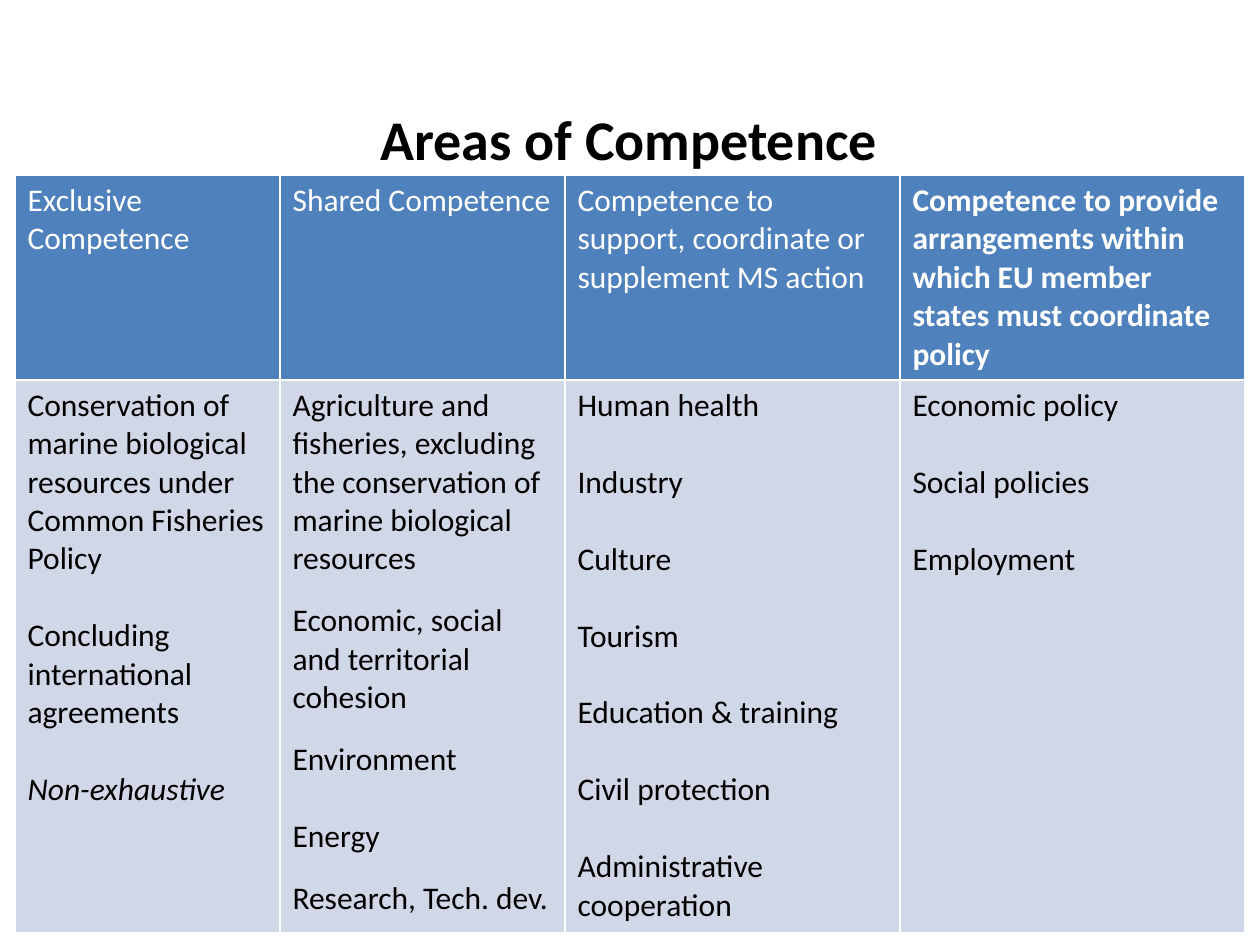
from lxml.etree import SubElement
from pptx import Presentation
from pptx.dml.color import RGBColor
from pptx.enum.text import MSO_ANCHOR, PP_ALIGN
from pptx.oxml.ns import qn
from pptx.util import Emu, Pt

PX = 914400 / 126
BLACK = RGBColor(0x00, 0x00, 0x00)
WHITE = RGBColor(0xFF, 0xFF, 0xFF)
BLUE = RGBColor(0x4F, 0x81, 0xBD)
PALE = RGBColor(0xD0, 0xD8, 0xE8)

TITLE = {"size": Pt(32), "bold": True, "italic": False, "name": "Calibri"}
BODY = {"size": Pt(18), "bold": False, "italic": False, "name": "Calibri"}
BOLD = {**BODY, "bold": True}
ITALIC = {**BODY, "italic": True}
WIDE, NARROW = 22, 13.4

COLUMN_WIDTHS = [265, 285, 335, 345]
ROW_HEIGHTS = [202, 553]

HEADERS = [
    ("Exclusive Competence", BODY),
    ("Shared Competence", BODY),
    ("Competence to support, coordinate or supplement MS action", BODY),
    ("Competence to provide arrangements within which EU member states "
     "must coordinate policy", BOLD),
]
AREAS = [
    [("Conservation of marine biological resources under Common Fisheries Policy", 0, BODY),
     ("Concluding international agreements", WIDE, BODY),
     ("Non-exhaustive", WIDE, ITALIC)],
    [("Agriculture and fisheries, excluding the conservation of marine "
      "biological resources", 0, BODY),
     ("Economic, social and territorial cohesion", NARROW, BODY),
     ("Environment", NARROW, BODY),
     ("Energy", WIDE, BODY),
     ("Research, Tech. dev.", NARROW, BODY)],
    [("Human health", 0, BODY)] + [
        (area, WIDE, BODY) for area in (
            "Industry", "Culture", "Tourism", "Education & training",
            "Civil protection", "Administrative cooperation")],
    [("Economic policy", 0, BODY),
     ("Social policies", WIDE, BODY),
     ("Employment", WIDE, BODY)],
]


def px(n):
    return Emu(round(n * PX))


def add_text(p, text, style, color):
    r = p.add_run()
    r.text = text
    for name, value in style.items():
        setattr(r.font, name, value)
    r.font.color.rgb = color


def set_borders(cell, color, width):
    tc_pr = cell._tc.get_or_add_tcPr()
    for side in ("a:lnL", "a:lnR", "a:lnT", "a:lnB"):
        ln = SubElement(tc_pr, qn(side), w=str(Pt(width)))
        fill = SubElement(ln, qn("a:solidFill"))
        SubElement(fill, qn("a:srgbClr"), val=str(color))


def fill_cell(cell, items, color, fill):
    tf = cell.text_frame
    for i, (text, gap, style) in enumerate(items):
        p = tf.paragraphs[0] if i == 0 else tf.add_paragraph()
        if gap:
            p.space_before = Pt(gap)
        add_text(p, text, style, color)
    cell.fill.solid()
    cell.fill.fore_color.rgb = fill


def set_title(s, text, left, top, width, height):
    sp = s.shapes.title
    box = {"left": left, "top": top, "width": width, "height": height}
    for name, value in box.items():
        setattr(sp, name, px(value))
    tf = sp.text_frame
    tf.vertical_anchor = MSO_ANCHOR.MIDDLE
    p = tf.paragraphs[0]
    p.alignment = PP_ALIGN.CENTER
    add_text(p, text, TITLE, BLACK)


def add_competence_table(s, left, top):
    table = s.shapes.add_table(
        len(ROW_HEIGHTS), len(COLUMN_WIDTHS), px(left), px(top),
        px(sum(COLUMN_WIDTHS)), px(sum(ROW_HEIGHTS))).table
    for column, width in zip(table.columns, COLUMN_WIDTHS):
        column.width = px(width)
    for row, height in zip(table.rows, ROW_HEIGHTS):
        row.height = px(height)
    for i, ((header, style), areas) in enumerate(zip(HEADERS, AREAS)):
        fill_cell(table.cell(0, i), [(header, 0, style)], WHITE, BLUE)
        set_borders(table.cell(1, i), WHITE, 1)
        fill_cell(table.cell(1, i), areas, BLACK, PALE)


def main():
    prs = Presentation()
    prs.slide_width, prs.slide_height = px(1260), px(945)
    s = prs.slides.add_slide(prs.slide_layouts[5])
    set_title(s, "Areas of Competence", 62, 89, 1134, 98)
    add_competence_table(s, 15, 175)
    prs.save("out.pptx")


if __name__ == "__main__":
    main()
